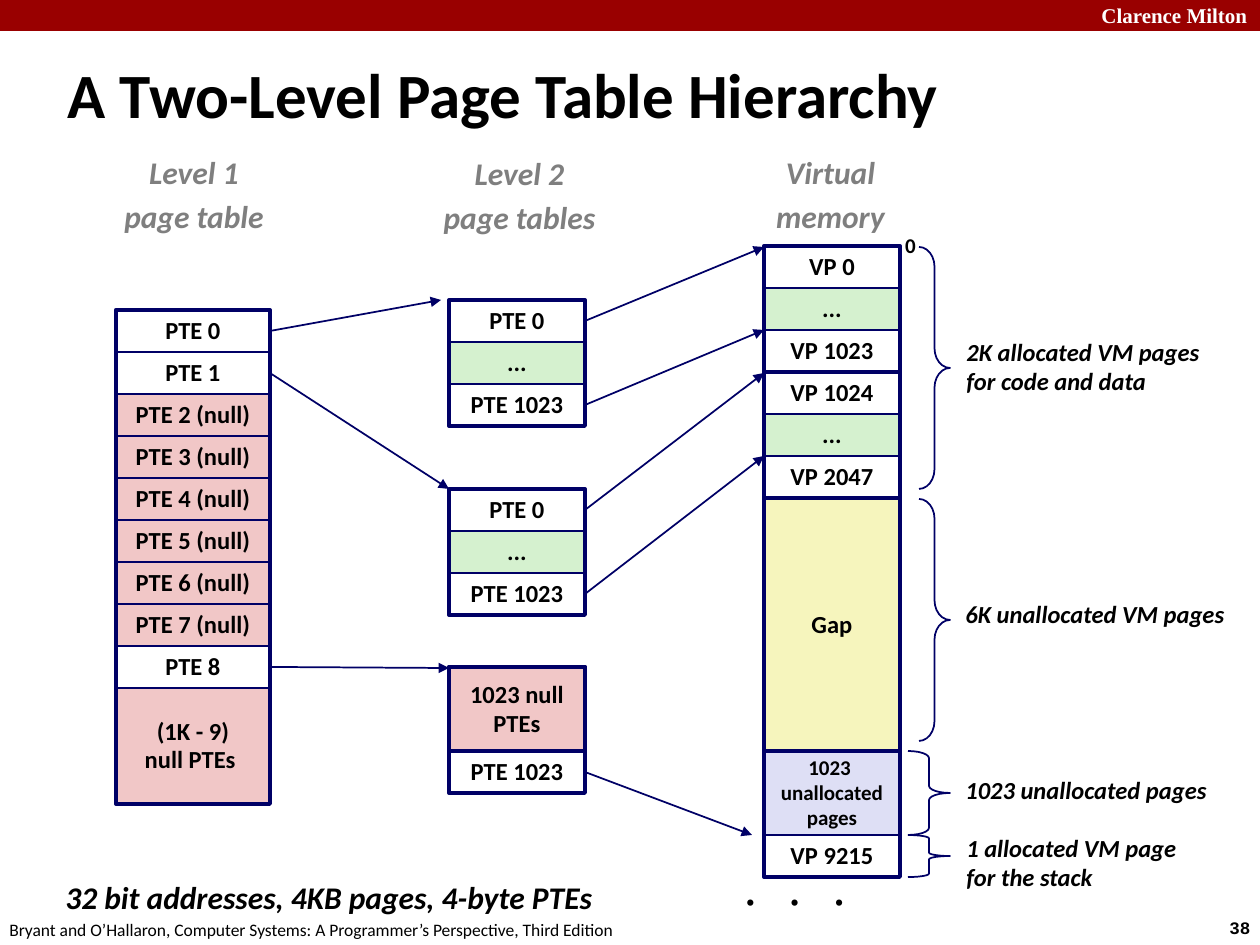
"""Builds a slide on a two-level page table hierarchy."""
from lxml import etree
from pptx import Presentation
from pptx.dml.color import RGBColor
from pptx.enum.shapes import MSO_CONNECTOR, MSO_SHAPE
from pptx.enum.text import MSO_ANCHOR, PP_ALIGN
from pptx.oxml.ns import qn
from pptx.util import Emu, Pt

LEFT, CENTER = PP_ALIGN.LEFT, PP_ALIGN.CENTER
TOP, MIDDLE = MSO_ANCHOR.TOP, MSO_ANCHOR.MIDDLE
RECTANGLE, BRACE = MSO_SHAPE.RECTANGLE, MSO_SHAPE.RIGHT_BRACE
STRAIGHT = MSO_CONNECTOR.STRAIGHT
SCALE = 914400 / 126
WIDTH, HEIGHT = 1260, 945
ROW = 42
THIN, THICK = 1, 2.25

COLORS = {
    "banner": "990000", "white": "FFFFFF", "black": "000000", "grey": "7F7F7F",
    "navy": "000066", "green": "D5F1CF", "pink": "F1C7C7", "yellow": "F6F5BD",
    "lilac": "DEDFF5",
}

BASE = {"size": 14, "name": "Calibri", "color": "black", "bold": True, "italic": False,
        "align": LEFT, "anchor": TOP, "spacing": 1, "before": 0}
STYLES = {
    "brand": {"size": 12, "name": "Times New Roman", "color": "white"},
    "number": {"size": 10, "name": "Courier New"},
    "footer": {"size": 10, "bold": False},
    "title": {"size": 36, "anchor": MIDDLE},
    "heading": {"size": 18, "color": "grey", "italic": True, "align": CENTER,
                "spacing": 0.88, "before": 6},
    "dots": {"size": 24, "spacing": 0.88},
    "cell": {"align": CENTER, "anchor": MIDDLE, "spacing": 0.98},
    "small": {"size": 12, "align": CENTER, "anchor": MIDDLE, "spacing": 0.98},
    "note": {"italic": True, "anchor": MIDDLE, "spacing": 0.98},
    "summary": {"size": 18, "italic": True},
}

TEXTS = [
    ("brand", "Clarence Milton", 1089, -4, 180, 38),
    ("number", "38", 1217, 911, 57, 34),
    ("footer", "Bryant and O’Hallaron, Computer Systems: A Programmer’s Perspective, "
               "Third Edition", -3, 913, 640, 34),
    ("title", "A Two-Level Page Table Hierarchy", 55, 39, 1142, 108),
    ("heading", "Level 1\npage table", 110, 152, 168, 91),
    ("heading", "Level 2\npage tables", 429, 153, 181, 91),
    ("heading", "Virtual\nmemory", 762, 152, 137, 91),
    ("small", "0", 892, 227, 37, 38),
    ("note", "2K allocated VM pages\nfor code and data", 954, 331, 262, 72),
    ("note", "6K unallocated VM pages", 953, 594, 288, 42),
    ("note", "1023 unallocated pages", 953, 770, 275, 42),
    ("note", "1 allocated VM page\nfor the stack", 954, 827, 239, 72),
    ("summary", "32 bit addresses, 4KB pages, 4-byte PTEs", 53, 872, 566, 50),
]
VERTICAL_DOTS = ("dots", "...", 819, 873, 47, 71)

PTE_ROWS = [("PTE 0", ROW, None), ("...", ROW, "green"), ("PTE 1023", ROW, None)]
STACKS = [
    (116, 310, 154, [("PTE 0", ROW, None), ("PTE 1", ROW, None)]
     + [(f"PTE {index} (null)", ROW, "pink") for index in range(2, 8)]
     + [("PTE 8", ROW, None), ("(1K - 9)\nnull PTEs ", 116, "pink")]),
    (449, 300, 136, PTE_ROWS),
    (449, 489, 136, PTE_ROWS),
    (449, 667, 136, [("1023 null\nPTEs", 2 * ROW, "pink"), ("PTE 1023", ROW, None)]),
    (764, 246, 136, [("VP 0", ROW, None), ("...", ROW, "green"), ("VP 1023", ROW, None)]),
    (764, 372, 136, [("VP 1024", ROW, None), ("...", ROW, "green"), ("VP 2047", ROW, None)]),
    (764, 498, 136, [("Gap", 253, "yellow")]),
    (764, 751, 136, [("1023 \nunallocated\npages", 2 * ROW, "lilac"), ("VP 9215", ROW, None)]),
]

ARROWS = [
    (585, 321, 764, 247), (585, 405, 764, 330), (585, 510, 764, 373),
    (585, 594, 764, 456), (585, 772, 752, 835), (270, 331, 441, 300),
    (270, 373, 449, 489), (270, 667, 449, 668),
]
BRACES = [(919, 247, 31, 242, 0.64), (919, 499, 31, 242, 0.64),
          (908, 751, 42, 84, 0.17), (908, 835, 42, 42, 0.08)]


def px(*lengths):
    return [Emu(round(length * SCALE)) for length in lengths]


def color(name):
    return RGBColor.from_string(COLORS[name])


def write(box, text, style):
    look = BASE | STYLES[style]
    frame = box.text_frame
    frame.word_wrap = True
    frame.vertical_anchor = look["anchor"]
    for index, line in enumerate(text.split("\n")):
        para = frame.add_paragraph() if index else frame.paragraphs[0]
        para.alignment = look["align"]
        para.line_spacing = look["spacing"]
        para.space_before = Pt(look["before"] if index else 0)
        span = para.add_run()
        span.text = line
        for key in ("name", "bold", "italic"):
            setattr(span.font, key, look[key])
        span.font.size = Pt(look["size"])
        span.font.color.rgb = color(look["color"])


def add_text(page, style, text, *area):
    box = page.shapes.add_textbox(*px(*area))
    write(box, text, style)
    return box


def add_outline(page, kind, area, fill=None, line="navy", weight=THIN):
    shape = page.shapes.add_shape(kind, *px(*area))
    shape.shadow.inherit = False
    if fill:
        shape.fill.solid()
        shape.fill.fore_color.rgb = color(fill)
    else:
        shape.fill.background()
    if line:
        shape.line.color.rgb = color(line)
        shape.line.width = Pt(weight)
    else:
        shape.line.fill.background()
    return shape


def add_stack(page, left, top, width, rows):
    offset = top
    for text, height, fill in rows:
        line = "lilac" if fill == "lilac" else "navy"
        weight = THICK if height == 2 * ROW and fill == "pink" else THIN
        cell = add_outline(page, RECTANGLE, (left, offset, width, height), fill, line, weight)
        write(cell, text, "small" if fill == "lilac" else "cell")
        offset += height
    add_outline(page, RECTANGLE, (left, top, width, offset - top), weight=THICK)


def add_arrow(page, *ends):
    arrow = page.shapes.add_connector(STRAIGHT, *px(*ends))
    arrow.line.color.rgb = color("navy")
    arrow.line.width = Pt(THIN)
    etree.SubElement(arrow.line._get_or_add_ln(), qn("a:tailEnd"), type="triangle")
    etree.SubElement(arrow._element.spPr, qn("a:effectLst"))


def main():
    deck = Presentation()
    deck.slide_width, deck.slide_height = px(WIDTH, HEIGHT)
    page = deck.slides.add_slide(deck.slide_layouts[6])
    add_outline(page, RECTANGLE, (0, 0, WIDTH, 31), "banner", None)
    for item in TEXTS:
        add_text(page, *item)
    add_text(page, *VERTICAL_DOTS).rotation = 90
    for stack in STACKS:
        add_stack(page, *stack)
    for arrow in ARROWS:
        add_arrow(page, *arrow)
    for *area, bend in BRACES:
        add_outline(page, BRACE, area).adjustments[0] = bend
    deck.save("out.pptx")


if __name__ == "__main__":
    main()
